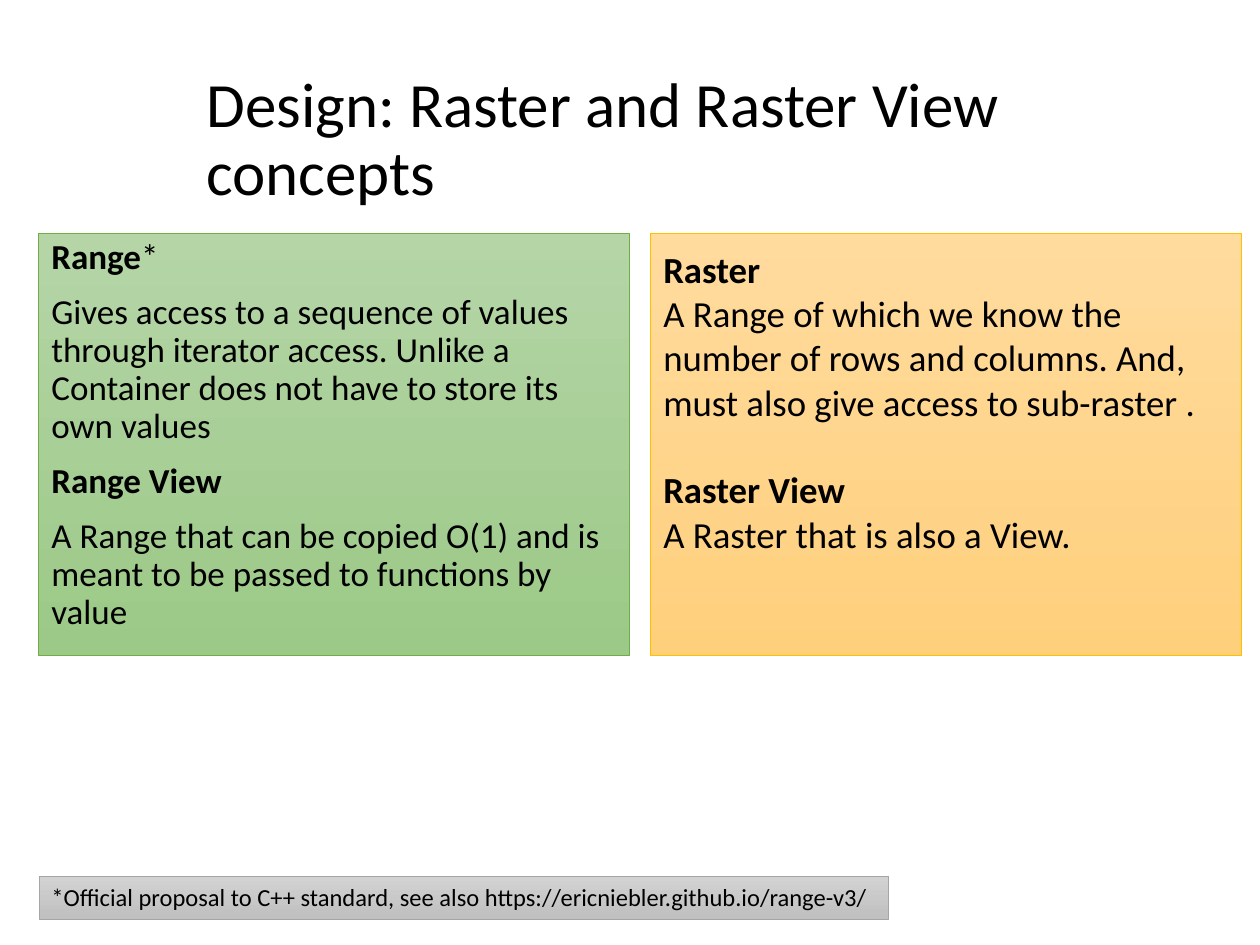
from pptx import Presentation
from pptx.dml.color import RGBColor
from pptx.enum.shapes import MSO_SHAPE as Shape
from pptx.enum.text import MSO_ANCHOR as Anchor, PP_ALIGN as Align
from pptx.util import Emu, Pt

EMU_PER_PX = 914400 / 126


def px(length):
    return Emu(round(length * EMU_PER_PX))


def rgb(color):
    return RGBColor.from_string(color)


presentation = Presentation()
presentation.slide_width, presentation.slide_height = px(1260), px(945)
slide = presentation.slides.add_slide(presentation.slide_layouts[6])

title = slide.shapes.add_textbox(px(194), px(50), px(979), px(183))

# left, top, width, height, gradient top, gradient bottom, line
panels = [
    (39, 233, 591, 422, "B5D5A7", "9CC987", "70AD47"),
    (651, 233, 591, 422, "FFDB9E", "FFD07C", "FFC000"),
    (39, 876, 849, 43, "D2D2D2", "C0C0C0", "A5A5A5"),
]
boxes = []
for left, top, width, height, light, dark, line in panels:
    box = slide.shapes.add_shape(Shape.RECTANGLE, px(left), px(top), px(width), px(height))
    box.shadow.inherit = False
    box.fill.gradient()
    box.fill.gradient_angle = 270
    for stop, color in zip(box.fill.gradient_stops, (light, dark)):
        stop.color.rgb = rgb(color)
    box.line.color.rgb = rgb(line)
    box.line.width = Pt(0.5)
    boxes.append(box)
range_box, raster_box, footnote = boxes

# shape, anchor, size, line spacing, paragraphs as (space before, [(text, bold)])
texts = [
    (title, Anchor.MIDDLE, 36, 0.9, [(0, [("Design: Raster and Raster View concepts", False)])]),
    (range_box, Anchor.TOP, 20, 0.9, [
        (0, [("Range", True), ("*", False)]),
        (10, [("Gives access to a sequence of values through iterator access. "
               "Unlike a Container does not have to store its own values", False)]),
        (10, [("Range View", True)]),
        (10, [("A Range that can be copied O(1) and is meant to be passed "
               "to functions by value", False)]),
    ]),
    (raster_box, Anchor.TOP, 21, 1.0, [
        (0, [("Raster", True)]),
        (0, [("A Range of which we know the number of rows and columns. "
              "And, must also give access to sub-raster .", False)]),
        (25, [("Raster View", True)]),
        (0, [("A Raster that is also a View.", False)]),
    ]),
    (footnote, Anchor.TOP, 14, 1.0, [
        (0, [("*Official proposal to C++ standard, see also "
              "https://ericniebler.github.io/range-v3/", False)]),
    ]),
]
for shape, anchor, size, spacing, paragraphs in texts:
    frame = shape.text_frame
    frame.word_wrap = True
    frame.vertical_anchor = anchor
    for index, (space_before, runs) in enumerate(paragraphs):
        paragraph = frame.add_paragraph() if index else frame.paragraphs[0]
        paragraph.alignment = Align.LEFT
        paragraph.line_spacing = spacing
        paragraph.space_before = Pt(space_before)
        for text, bold in runs:
            run = paragraph.add_run()
            run.text = text
            run.font.name = "Calibri"
            run.font.size = Pt(size)
            run.font.bold = bold
            run.font.color.rgb = rgb("000000")
raster_box.text_frame.margin_top = px(14)

presentation.save("out.pptx")
